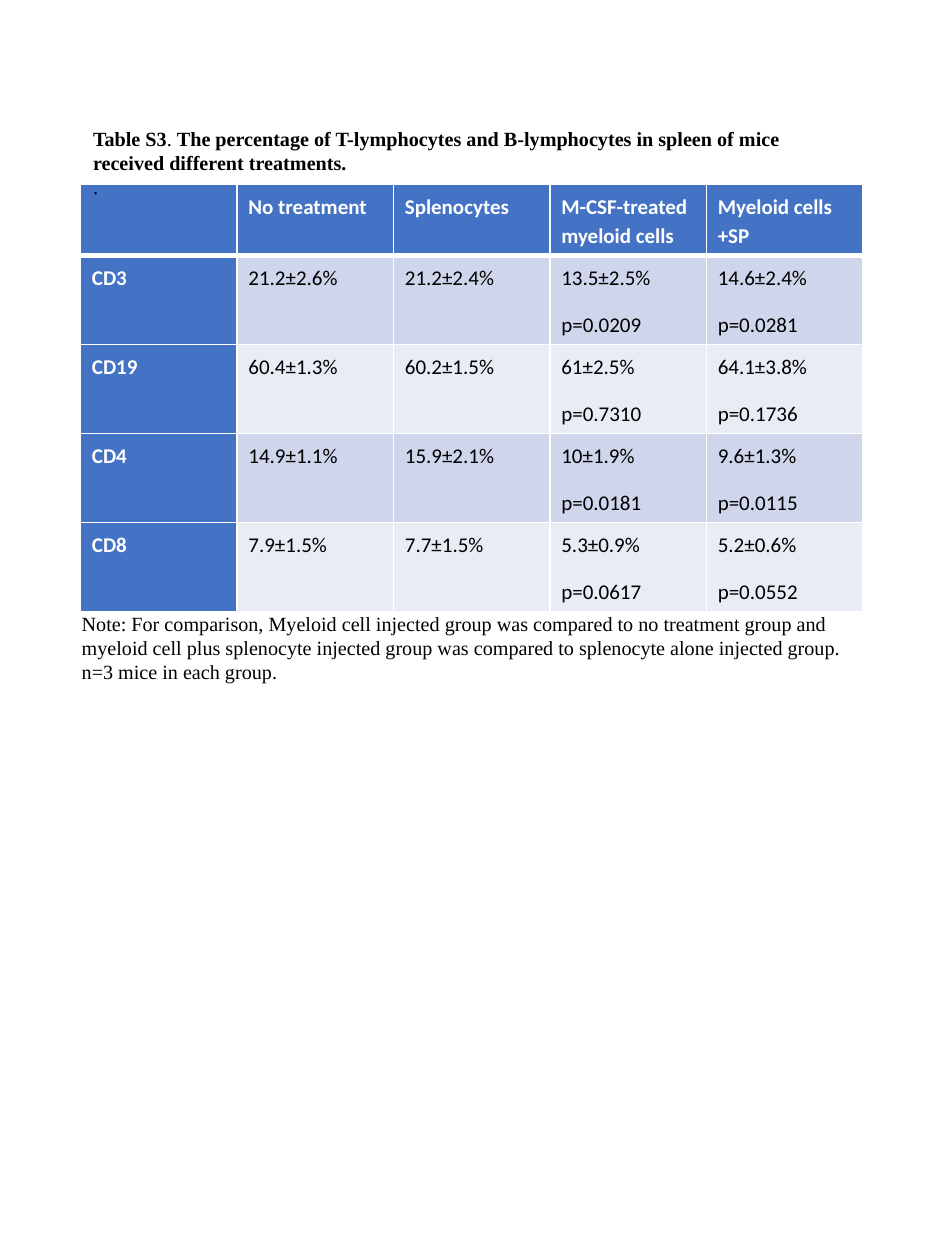
from lxml.etree import SubElement
from pptx import Presentation
from pptx.dml.color import RGBColor
from pptx.enum.text import MSO_ANCHOR as Anchor, MSO_AUTO_SIZE as AutoSize
from pptx.oxml.ns import qn
from pptx.util import Inches, Pt

# Content: title as paragraphs of (text, bold) runs
TITLE = [
    [("Table S3", True), (". ", False),
     ("The percentage of T-lymphocytes and B-lymphocytes in spleen of mice "
      "received different treatments.", True)],
    [(".", False)],
]
TREATMENTS = ["", "No treatment", "Splenocytes",
              "M-CSF-treated myeloid cells", "Myeloid cells +SP"]
MARKERS = [
    ["CD3", "21.2±2.6%", "21.2±2.4%", "13.5±2.5%\np=0.0209", "14.6±2.4%\np=0.0281"],
    ["CD19", "60.4±1.3%", "60.2±1.5%", "61±2.5%\np=0.7310", "64.1±3.8%\np=0.1736"],
    ["CD4", "14.9±1.1%", "15.9±2.1%", "10±1.9%\np=0.0181", "9.6±1.3%\np=0.0115"],
    ["CD8", "7.9±1.5%", "7.7±1.5%", "5.3±0.9%\np=0.0617", "5.2±0.6%\np=0.0552"],
]
NOTE = [[("Note: For comparison, Myeloid cell injected group was compared to no "
          "treatment group and myeloid cell plus splenocyte injected group was "
          "compared to splenocyte alone injected group. n=3 mice in each group.",
          False)]]

BLUE, WHITE, BLACK = "4472C4", "FFFFFF", "000000"
BANDS = ["CFD5EA", "E9EBF5"]
HEADER_HEIGHT, MARKER_HEIGHT = 0.52, 0.66
COLUMN_WIDTH = 6.21 / len(TREATMENTS)


def rgb(color):
    return RGBColor.from_string(color)


def add_run(paragraph, text, font, size, color, bold):
    run = paragraph.add_run()
    run.text = text
    run.font.name, run.font.size, run.font.bold = font, Pt(size), bold
    run.font.color.rgb = rgb(color)


def add_text(slide, paragraphs, left, top, width, height, anchor=Anchor.TOP):
    frame = slide.shapes.add_textbox(
        Inches(left), Inches(top), Inches(width), Inches(height)).text_frame
    frame.word_wrap = True
    frame.auto_size = AutoSize.SHAPE_TO_FIT_TEXT
    frame.vertical_anchor = anchor
    for i, runs in enumerate(paragraphs):
        paragraph = frame.add_paragraph() if i else frame.paragraphs[0]
        for text, bold in runs:
            add_run(paragraph, text, "Times New Roman", 11.5, BLACK, bold)


def set_borders(cell, widths):
    """Draw white borders; widths are points for left, right, top, bottom."""
    properties = cell._tc.get_or_add_tcPr()
    for i, (side, width) in enumerate(zip("LRTB", widths)):
        line = SubElement(properties, qn(f"a:ln{side}"), w=str(Pt(width)))
        fill = SubElement(line, qn("a:solidFill"))
        SubElement(fill, qn("a:srgbClr"), val=WHITE)
        properties.insert(i, line)  # borders come before the fill


def fill_cell(cell, text, row, column):
    heading = row == 0 or column == 0
    cell.fill.solid()
    cell.fill.fore_color.rgb = rgb(BLUE if heading else BANDS[(row - 1) % 2])
    cell.margin_left = cell.margin_right = Inches(0.09)
    cell.margin_top = cell.margin_bottom = Inches(0.05)
    set_borders(cell, (1, 1, 3 if row == 1 else 1, 3 if row == 0 else 1))
    if not text:
        return
    for i, line in enumerate(text.split("\n")):
        paragraph = cell.text_frame.add_paragraph() if i else cell.text_frame.paragraphs[0]
        paragraph.line_spacing = 1.15
        paragraph.space_after = Pt(10)
        add_run(paragraph, line, "Calibri", 12, WHITE if heading else BLACK, heading)


def main():
    deck = Presentation()
    deck.slide_width, deck.slide_height = Inches(7.5), Inches(10)
    slide = deck.slides.add_slide(deck.slide_layouts[6])

    # Table of percentages
    rows = [TREATMENTS] + MARKERS
    heights = [HEADER_HEIGHT] + [MARKER_HEIGHT] * len(MARKERS)
    table = slide.shapes.add_table(
        len(rows), len(TREATMENTS), Inches(0.64), Inches(1.46),
        Inches(6.21), Inches(sum(heights))).table
    for column in table.columns:
        column.width = Inches(COLUMN_WIDTH)
    for r, (texts, height) in enumerate(zip(rows, heights)):
        table.rows[r].height = Inches(height)
        for c, text in enumerate(texts):
            fill_cell(table.cell(r, c), text, r, c)

    # Title above, note below
    add_text(slide, TITLE, 0.64, 0.95, 6.21, 0.68, Anchor.MIDDLE)
    add_text(slide, NOTE, 0.55, 4.8, 6.31, 0.68)

    deck.save("out.pptx")


if __name__ == "__main__":
    main()
